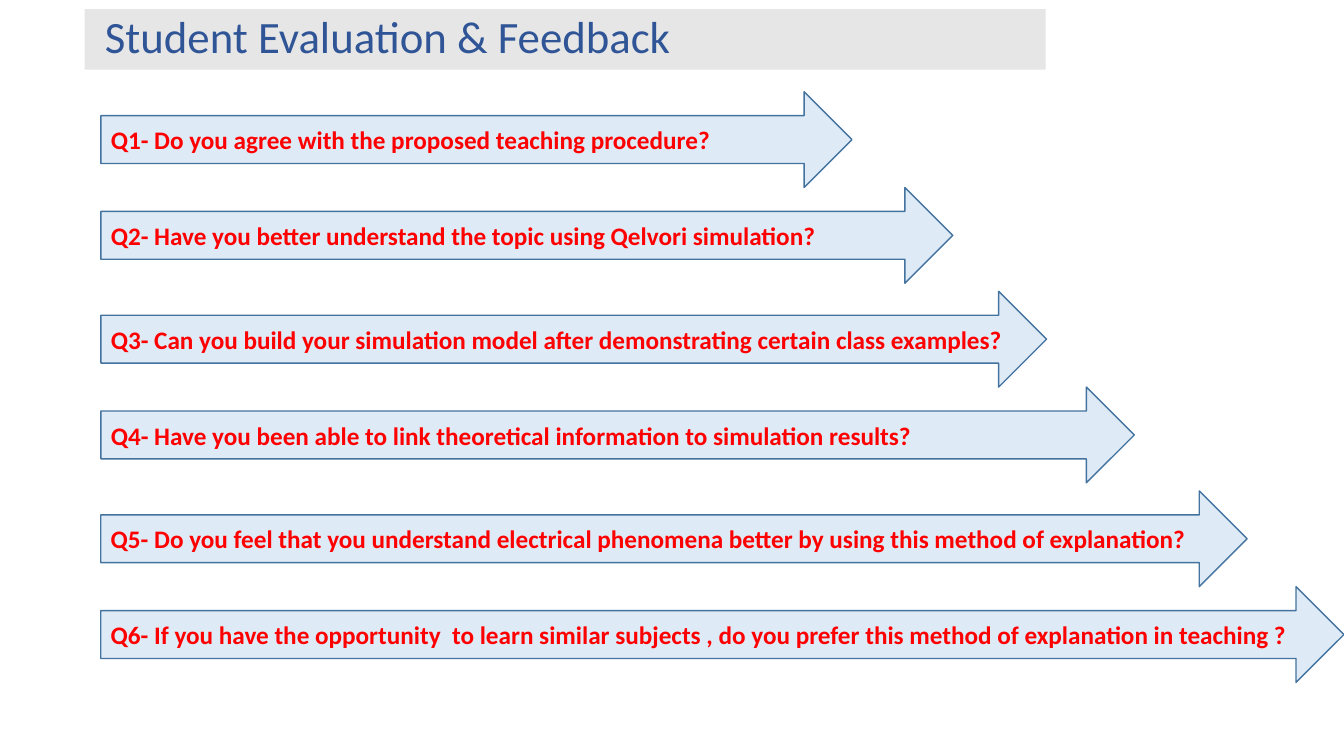
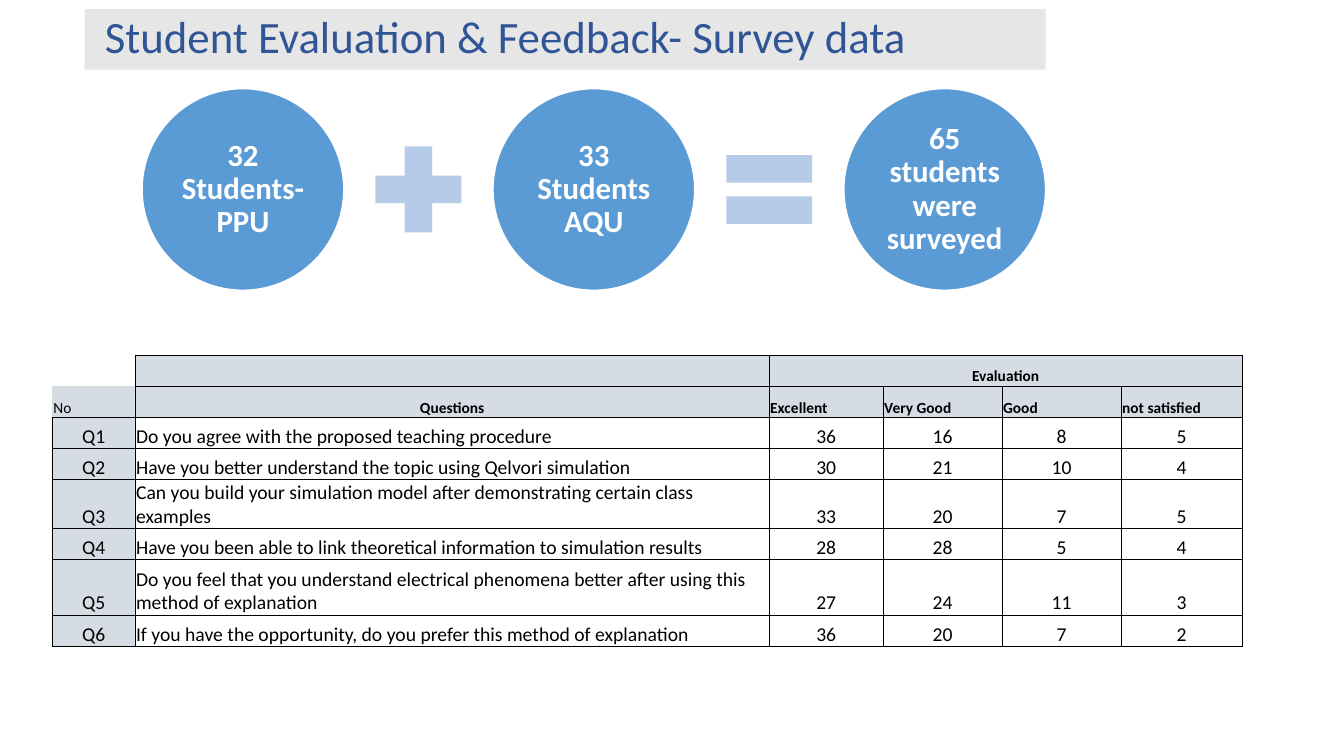
from dataclasses import dataclass

from lxml import etree
from pptx import Presentation
from pptx import util as u
from pptx.dml import color
from pptx.enum import shapes, text
from pptx.oxml import ns

FONT = "Calibri"
BAND, TITLE = "E7E6E6", "2F5597"
ARROW_FILL, ARROW_LINE, QUESTION = "DEEBF7", "43739E", "FF0000"
CIRCLE, OPERATOR, WHITE = "5B9BD5", "B5CBE7", "FFFFFF"
HEADER, BLACK = "D6DCE4", "000000"
LEFT, CENTER = text.PP_ALIGN.LEFT, text.PP_ALIGN.CENTER


@dataclass
class Box:
    left: float
    top: float
    width: float
    height: float

    def inches(self):
        return [u.Inches(v) for v in (self.left, self.top, self.width, self.height)]


TITLE_BOX = Box(0.84, 0.09, 9.53, 0.6)
ARROWS_BOX = Box(1, 0.91, 12.33, 5.86)
SUM_BOX = Box(1.41, 0.88, 8.96, 2)
TABLE_BOX = Box(0.52, 3.52, 11.8, 2.72)

QUESTIONS = [
    ("Q1- Do you agree with the proposed teaching procedure?", 7.45),
    ("Q2- Have you better understand the topic using Qelvori simulation?", 8.45),
    ("Q3- Can you build your simulation model after demonstrating certain class examples?", 9.38),
    ("Q4- Have you been able to link theoretical information to simulation results?", 10.25),
    ("Q5- Do you feel that you understand electrical phenomena better by using this method of explanation?", 11.37),
    ("Q6- If you have the opportunity  to learn similar subjects , do you prefer this method of explanation in teaching ?", 12.33),
]
GROUPS = ["32 Students-PPU", "33 Students AQU", "65 students were surveyed"]
OPERATORS = [shapes.MSO_SHAPE.MATH_PLUS, shapes.MSO_SHAPE.MATH_EQUAL]
COLUMNS = [0.82, 6.29, 1.13, 1.18, 1.18, 1.2]
HEADINGS = [
    ["", "", "Evaluation", "", "", ""],
    ["No", "Questions", "Excellent", "Very Good", "Good", "not satisfied"],
]
ANSWERS = [
    ["Q1", "Do you agree with the proposed teaching procedure", 36, 16, 8, 5],
    ["Q2", "Have you better understand the topic using Qelvori simulation", 30, 21, 10, 4],
    ["Q3", "Can you build your simulation model after demonstrating certain class examples", 33, 20, 7, 5],
    ["Q4", "Have you been able to link theoretical information to simulation results", 28, 28, 5, 4],
    ["Q5", "Do you feel that you understand electrical phenomena better after using this method of explanation", 27, 24, 11, 3],
    ["Q6", "If you have the opportunity, do you prefer this method of explanation", 36, 20, 7, 2],
]


def rgb(value):
    return color.RGBColor.from_string(value)


def paint(item, value):
    item.fill.solid()
    item.fill.fore_color.rgb = rgb(value)


def write(frame, words, size, ink, bold=False, align=LEFT, spacing=None):
    frame.text = words
    frame.word_wrap = True
    para = frame.paragraphs[0]
    para.alignment = align
    para.line_spacing = spacing
    para.font.name = FONT
    para.font.size = u.Pt(size)
    para.font.bold = bold
    para.font.color.rgb = rgb(ink)


def add_shape(page, kind, box, fill, line=None):
    shape = page.shapes.add_shape(kind, *box.inches())
    shape.shadow.inherit = False
    paint(shape, fill)
    if line:
        shape.line.color.rgb = rgb(line)
        shape.line.width = u.Pt(1)
    else:
        shape.line.fill.background()
    return shape


def add_page(deck, words):
    page = deck.slides.add_slide(deck.slide_layouts[5])
    title = page.shapes.title
    title.left, title.top, title.width, title.height = TITLE_BOX.inches()
    paint(title, BAND)
    frame = title.text_frame
    write(frame, words, 32, TITLE, spacing=0.9)
    frame.auto_size = text.MSO_AUTO_SIZE.NONE
    frame.vertical_anchor = text.MSO_ANCHOR.MIDDLE
    frame.margin_left = u.Inches(0.2)
    return page


def add_questions(page, box):
    height, pair_pitch = 0.95, 1.98
    for index, (question, width) in enumerate(QUESTIONS):
        pair, second = divmod(index, 2)
        top = box.top + pair * pair_pitch + second * height
        arrow = add_shape(page, shapes.MSO_SHAPE.RIGHT_ARROW,
                          Box(box.left, top, width, height), ARROW_FILL, ARROW_LINE)
        write(arrow.text_frame, question, 18, QUESTION, bold=True)
        arrow.text_frame.vertical_anchor = text.MSO_ANCHOR.MIDDLE


def add_sum(page, box):
    diameter, sign = box.height, box.height * 0.58
    pitch = (box.width - diameter) / (len(GROUPS) - 1)
    for index, group in enumerate(GROUPS):
        left = box.left + index * pitch
        circle = add_shape(page, shapes.MSO_SHAPE.OVAL,
                           Box(left, box.top, diameter, diameter), CIRCLE, WHITE)
        frame = circle.text_frame
        write(frame, group, 22, WHITE, bold=True, align=CENTER, spacing=0.9)
        frame.vertical_anchor = text.MSO_ANCHOR.MIDDLE
        frame.margin_left = frame.margin_right = u.Inches(0.03)
        frame.margin_top = frame.margin_bottom = u.Inches(0.03)
        if index < len(OPERATORS):
            sign_left = left + (diameter + pitch - sign) / 2
            sign_top = box.top + (diameter - sign) / 2
            add_shape(page, OPERATORS[index], Box(sign_left, sign_top, sign, sign), OPERATOR)


def set_borders(cell, sides):
    properties = cell._tc.get_or_add_tcPr()
    for position, side in enumerate("LRTB"):
        line = etree.Element(ns.qn(f"a:ln{side}"), w=str(u.Pt(0.5)))
        if side in sides:
            fill = etree.SubElement(line, ns.qn("a:solidFill"))
            etree.SubElement(fill, ns.qn("a:srgbClr"), val=BLACK)
        else:
            etree.SubElement(line, ns.qn("a:noFill"))
        properties.insert(position, line)


def format_cell(cell, row, column, words):
    heading = row < len(HEADINGS)
    centered = column != 1 if not heading else words in ("Evaluation", "Questions")
    write(cell.text_frame, str(words), 11 if heading else 14, BLACK,
          bold=heading and column > 0, align=CENTER if centered else LEFT)
    cell.vertical_anchor = text.MSO_ANCHOR.BOTTOM
    cell.margin_left = cell.margin_right = cell.margin_top = u.Inches(0.01)
    cell.margin_bottom = 0
    if (row, column) == (0, 0) or (not heading and column > 0):
        cell.fill.background()
    else:
        paint(cell, HEADER)
    set_borders(cell, {(0, 0): "R", (1, 0): "RB"}.get((row, column), "LRTB"))


def add_results(page, box):
    rows = HEADINGS + ANSWERS
    table = page.shapes.add_table(len(rows), len(COLUMNS), *box.inches()).table
    table.first_row = table.horz_banding = False
    for column, width in zip(table.columns, COLUMNS):
        column.width = u.Inches(width)
    for index, row in enumerate(rows):
        table.rows[index].height = u.Inches(0.55 if row[0] == "Q5" else 0.31)
        for column, words in enumerate(row):
            format_cell(table.cell(index, column), index, column, words)
    table.cell(0, 2).merge(table.cell(0, 5))


def main():
    deck = Presentation()
    deck.slide_width, deck.slide_height = u.Inches(13.33), u.Inches(7.5)
    add_questions(add_page(deck, "Student Evaluation & Feedback"), ARROWS_BOX)
    survey = add_page(deck, "Student Evaluation & Feedback- Survey data")
    add_sum(survey, SUM_BOX)
    add_results(survey, TABLE_BOX)
    deck.save("out.pptx")


if __name__ == "__main__":
    main()
